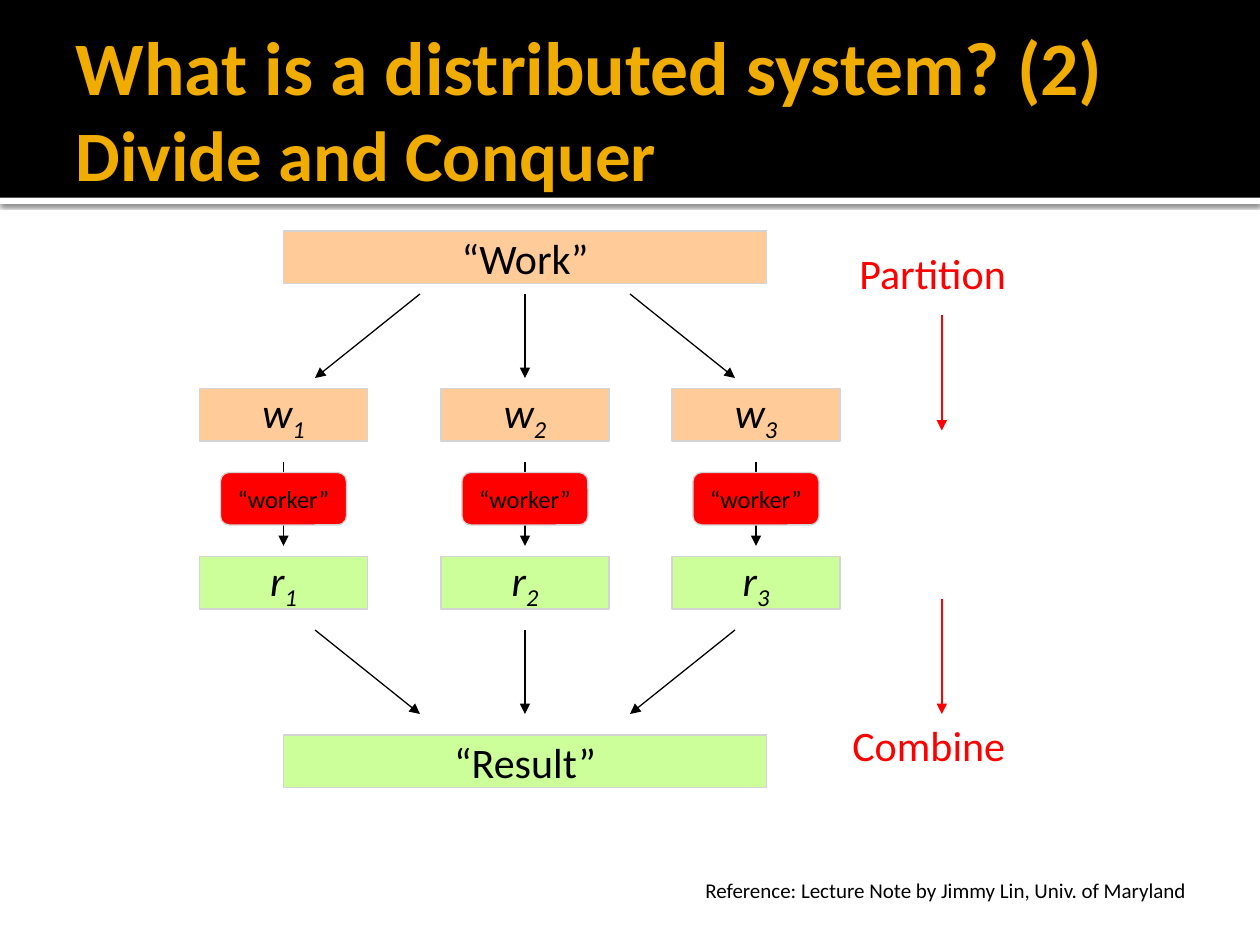
from lxml.etree import SubElement as Sub
from pptx import Presentation
from pptx.dml.color import RGBColor as RGB
from pptx.enum.shapes import MSO_CONNECTOR as LINK, MSO_SHAPE as KIND
from pptx.enum.text import MSO_ANCHOR as ANCHOR, MSO_AUTO_SIZE as FIT, PP_ALIGN as ALIGN
from pptx.oxml.ns import qn
from pptx.util import Pt

BLACK = RGB(0x00, 0x00, 0x00)
WHITE = RGB(0xFF, 0xFF, 0xFF)
GOLD = RGB(0xF0, 0xAD, 0x00)
PEACH = RGB(0xFF, 0xCC, 0x99)
LIME = RGB(0xCC, 0xFF, 0x99)
RED = RGB(0xFF, 0x00, 0x00)
GREY = RGB(0xD4, 0xD4, 0xD6)

deck = Presentation()
deck.slide_width, deck.slide_height = Pt(720), Pt(540)
slide = deck.slides.add_slide(deck.slide_layouts[5])
shapes = slide.shapes


def write(par, text, size, color=BLACK, **more):
    """Add a Calibri run to a paragraph."""
    run = par.add_run()
    run.text = text
    run.font.color.rgb = color
    for key, val in {"name": "Calibri", "size": Pt(size), **more}.items():
        setattr(run.font, key, val)
    return run


def draw(kind, x, y, w, h, fill, edge=GREY):
    """Add a filled shape and return it with its centred paragraph."""
    box = shapes.add_shape(kind, Pt(x), Pt(y), Pt(w), Pt(h))
    box.shadow.inherit = False
    box.fill.solid()
    box.fill.fore_color.rgb = fill
    box.line.color.rgb = edge
    box.line.width = Pt(0.75)
    box.text_frame.vertical_anchor = ANCHOR.MIDDLE
    par = box.text_frame.paragraphs[0]
    par.alignment = ALIGN.CENTER
    return box, par


# Header: white strip with a soft shadow under a black band, behind the title
strip, _ = draw(KIND.RECTANGLE, 0, 113, 720, 3.6, WHITE)
band, _ = draw(KIND.RECTANGLE, 0, 0, 720, 113, BLACK)
for spot, bar in enumerate((strip, band), 2):
    bar.line.fill.background()
    shapes._spTree.insert(spot, bar._element)
glow = Sub(strip._element.spPr.find(qn("a:effectLst")), qn("a:outerShdw"),
           blurRad=str(Pt(2.5)), dist=str(Pt(0.8)), dir="5400000", algn="t", rotWithShape="0")
tint = Sub(glow, qn("a:srgbClr"), val="000000")
Sub(tint, qn("a:alpha"), val="60000")

title = shapes.title
title.left, title.top, title.width, title.height = Pt(36), Pt(12.24), Pt(648), Pt(98.64)
frame = title.text_frame
form = {"margin_left": Pt(7.2), "margin_right": Pt(3.6), "margin_top": Pt(3.6),
        "margin_bottom": Pt(3.6), "vertical_anchor": ANCHOR.MIDDLE,
        "word_wrap": True, "auto_size": FIT.NONE}
for key, val in form.items():
    setattr(frame, key, val)
head = frame.paragraphs[0]
head.alignment = ALIGN.LEFT
write(head, "What is a distributed system? (2)", 43.2, GOLD, bold=True)
head.add_line_break()
write(head, "Divide and Conquer", 40.5, GOLD, bold=True)

# Whole work and whole result
for text, y, fill in (("“Work”", 132, PEACH), ("“Result”", 420, LIME)):
    _, par = draw(KIND.RECTANGLE, 162, y, 276, 30, fill)
    write(par, text, 24)

# Arrows: split, through each worker, join, and the two phases
mids = (162, 300, 432)
ends = ((240, 180), (300, 300), (360, 420))
lines = [(top, 168, low, 216, BLACK, 0.75) for top, low in ends]
lines += [(x, 264, x, 312, BLACK, 0.75) for x in mids]
lines += [(low, 360, top, 408, BLACK, 0.75) for top, low in ends]
lines += [(538.2, y, 538.2, y + 66, RED, 1.5) for y in (180, 342)]
for x1, y1, x2, y2, color, width in lines:
    arrow = shapes.add_connector(LINK.STRAIGHT, Pt(x1), Pt(y1), Pt(x2), Pt(y2))
    arrow.line.color.rgb = color
    arrow.line.width = Pt(width)
    Sub(arrow.line._get_or_add_ln(), qn("a:tailEnd"), type="triangle")
    Sub(arrow._element.spPr, qn("a:effectLst"))

# One column per part: input, worker, output
for num, mid in enumerate(mids, 1):
    for sign, y, fill in (("w", 222, PEACH), ("r", 318, LIME)):
        _, par = draw(KIND.RECTANGLE, mid - 48, y, 96, 30, fill)
        write(par, sign, 24, italic=True)
        sub = write(par, str(num), 24, italic=True)
        sub._r.get_or_add_rPr().set("baseline", "-25000")
    _, par = draw(KIND.ROUNDED_RECTANGLE, mid - 36, 270, 72, 30, RED)
    write(par, "“worker”", 14)

# Free labels
notes = (
    ("Partition", 484, 138, 102, 36, 24, RED, False),
    ("Combine", 480, 407.5, 105, 36, 24, RED, False),
    ("Reference: Lecture Note by Jimmy Lin, Univ. of Maryland",
     396, 498, 300, 21.6, 12, BLACK, True),
)
for text, x, y, w, h, size, color, wrap in notes:
    frame = shapes.add_textbox(Pt(x), Pt(y), Pt(w), Pt(h)).text_frame
    frame.word_wrap = wrap
    frame.auto_size = FIT.SHAPE_TO_FIT_TEXT
    write(frame.paragraphs[0], text, size, color)

deck.save("out.pptx")
